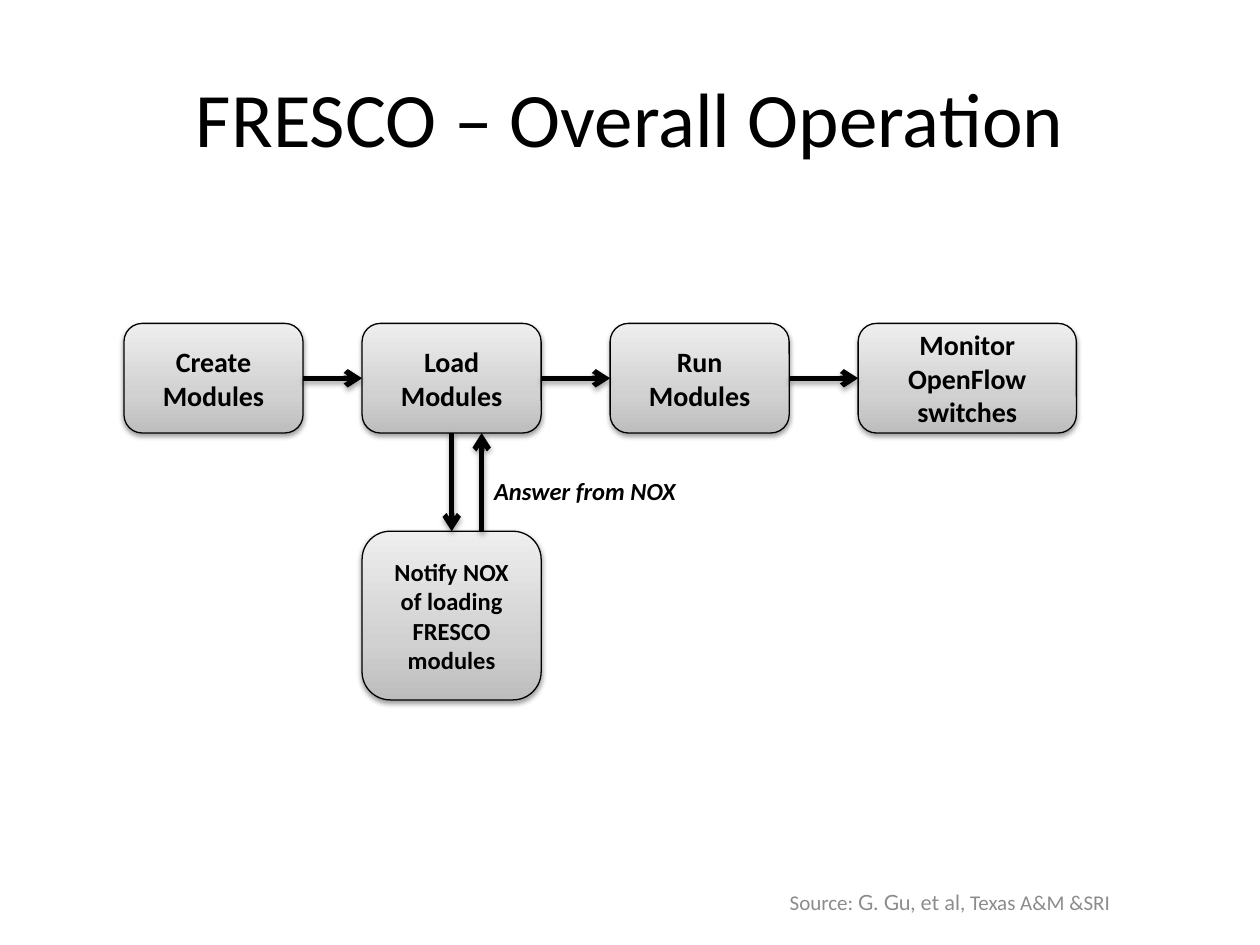
from copy import deepcopy

from lxml import etree
from pptx import Presentation
from pptx.dml.color import RGBColor
from pptx.enum.shapes import MSO_CONNECTOR, MSO_SHAPE
from pptx.enum.text import MSO_ANCHOR, MSO_AUTO_SIZE, PP_ALIGN
from pptx.oxml.ns import qn
from pptx.util import Cm, Pt

ROUNDED = MSO_SHAPE.ROUNDED_RECTANGLE
STRAIGHT = MSO_CONNECTOR.STRAIGHT
MIDDLE = MSO_ANCHOR.MIDDLE
CENTER = PP_ALIGN.CENTER
FIT_SHAPE = MSO_AUTO_SIZE.SHAPE_TO_FIT_TEXT
TITLE_ONLY = 5
TOP, LEFT, BOTTOM, RIGHT = range(4)

BLACK = RGBColor(0x00, 0x00, 0x00)
GRAY = RGBColor(0x8C, 0x8C, 0x8C)
GRADIENT = (
    (0, RGBColor(0xBD, 0xBD, 0xBD)),
    (0.35, RGBColor(0xD1, 0xD1, 0xD1)),
    (1, RGBColor(0xEE, 0xEE, 0xEE)),
)

FONT = "Calibri"
SOURCE_RUNS = (("Source: ", FONT), ("G. Gu, et al", "Lato"), (", Texas A&M &SRI", FONT))

BOX_WIDTH = Cm(3.61)
BOX_HEIGHT = Cm(2.21)
STEPS = (
    ("Create\nModules", Cm(0), BOX_WIDTH),
    ("Load Modules", Cm(4.8), BOX_WIDTH),
    ("Run\nModules", Cm(9.8), BOX_WIDTH),
    ("Monitor OpenFlow switches", Cm(14.8), Cm(4.4)),
)


def format_font(font, size, color=BLACK, bold=False, italic=False, name=FONT):
    font.name = name
    font.size = Pt(size)
    font.bold = bold
    font.italic = italic
    font.color.rgb = color


def add_shadow(effects, distance, opacity):
    shadow = etree.SubElement(
        effects, qn("a:outerShdw"), blurRad=str(Pt(3.1)), dist=str(Pt(distance)),
        dir="5400000", rotWithShape="0")
    color = etree.SubElement(shadow, qn("a:srgbClr"), val=str(BLACK))
    etree.SubElement(color, qn("a:alpha"), val=str(opacity * 1000))


def fill_gradient(fill):
    fill.gradient()
    fill.gradient_angle = 90
    first_stop = fill._fill._gradFill.find(qn("a:gsLst"))[0]
    first_stop.addnext(deepcopy(first_stop))
    for stop, (position, color) in zip(fill.gradient_stops, GRADIENT):
        stop.position = position
        stop.color.rgb = color


def add_box(slide, text, left, top, width, height, size):
    shape = slide.shapes.add_shape(ROUNDED, left, top, width, height)
    fill_gradient(shape.fill)
    shape.line.color.rgb = BLACK
    shape.line.width = Pt(0.75)
    shape.shadow.inherit = False
    add_shadow(shape._element.spPr.find(qn("a:effectLst")), 1.6, 38)
    text_frame = shape.text_frame
    text_frame.text = text
    text_frame.vertical_anchor = MIDDLE
    for paragraph in text_frame.paragraphs:
        paragraph.alignment = CENTER
        for run in paragraph.runs:
            format_font(run.font, size, bold=True)
    return shape


def add_arrow(slide, begin_x, begin_y, end_x, end_y):
    arrow = slide.shapes.add_connector(STRAIGHT, begin_x, begin_y, end_x, end_y)
    arrow.line.color.rgb = BLACK
    arrow.line.width = Pt(3)
    properties = arrow._element.spPr
    etree.SubElement(properties.find(qn("a:ln")), qn("a:tailEnd"), type="arrow")
    add_shadow(etree.SubElement(properties, qn("a:effectLst")), 1.8, 35)
    return arrow


def join(slide, start, start_side, end, end_side):
    arrow = add_arrow(slide, start.left, start.top, end.left, end.top)
    arrow.begin_connect(start, start_side)
    arrow.end_connect(end, end_side)


def add_title(slide, left, top, width, height):
    title = slide.shapes.title
    title.left, title.top, title.width, title.height = left, top, width, height
    title.text_frame.text = "FRESCO – Overall Operation"
    title.text_frame.vertical_anchor = MIDDLE
    paragraph = title.text_frame.paragraphs[0]
    paragraph.alignment = CENTER
    format_font(paragraph.runs[0].font, 44)


def add_answer_label(slide, left, top, width, height):
    label = slide.shapes.add_textbox(left, top, width, height)
    label.text_frame.text = "Answer from NOX"
    label.text_frame.word_wrap = False
    label.text_frame.auto_size = FIT_SHAPE
    format_font(label.text_frame.paragraphs[0].runs[0].font, 14, bold=True, italic=True)


def add_operation_flow(slide, left, top):
    steps = [add_box(slide, text, left + offset, top, width, BOX_HEIGHT, 16)
             for text, offset, width in STEPS]
    load = steps[1]
    notify_top = top + Cm(4.19)
    notify = add_box(slide, "Notify NOX of loading FRESCO modules",
                     load.left, notify_top, BOX_WIDTH, Cm(3.4), 14)
    for start, end in zip(steps, steps[1:]):
        join(slide, start, RIGHT, end, LEFT)
    join(slide, load, BOTTOM, notify, TOP)
    answer_x = load.left + Cm(2.41)
    add_arrow(slide, answer_x, notify_top, answer_x, top + BOX_HEIGHT)
    add_answer_label(slide, answer_x, top + Cm(2.95), Cm(4.19), Cm(0.86))


def add_source(slide, left, top, width, height):
    box = slide.shapes.add_textbox(left, top, width, height)
    box.text_frame.word_wrap = True
    box.text_frame.vertical_anchor = MIDDLE
    paragraph = box.text_frame.paragraphs[0]
    for text, name in SOURCE_RUNS:
        run = paragraph.add_run()
        run.text = text
        format_font(run.font, 12, GRAY, name=name)


def main():
    presentation = Presentation()
    presentation.slide_width = Cm(25.4)
    presentation.slide_height = Cm(19.05)
    slide = presentation.slides.add_slide(presentation.slide_layouts[TITLE_ONLY])
    add_title(slide, Cm(1.27), Cm(0.76), Cm(22.86), Cm(3.18))
    add_operation_flow(slide, Cm(2.5), Cm(6.52))
    add_source(slide, Cm(15.67), Cm(17.78), Cm(7.19), Cm(0.81))
    presentation.save("out.pptx")


if __name__ == "__main__":
    main()
